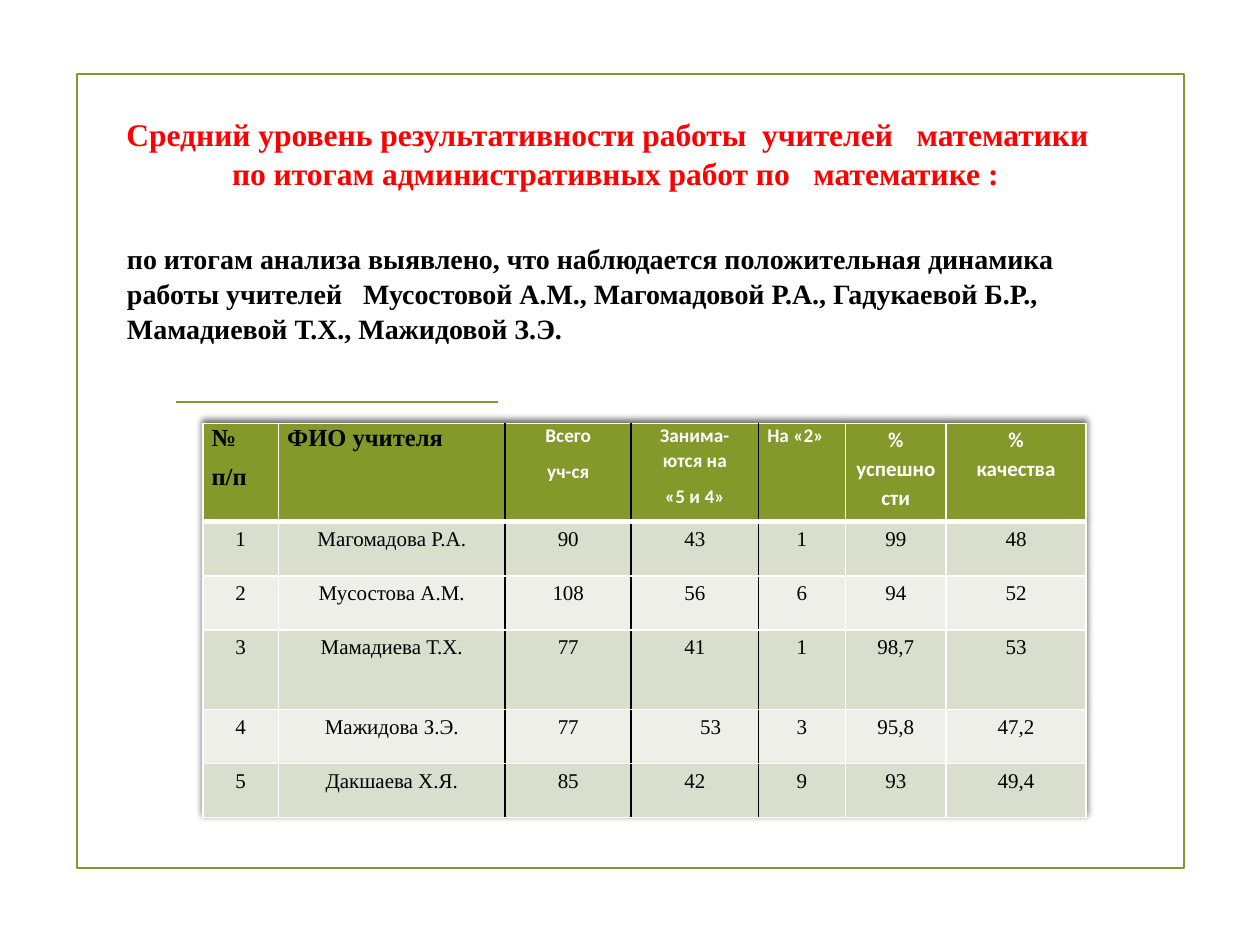
from lxml import etree
from pptx import Presentation, util as u
from pptx.dml.color import RGBColor
from pptx.enum import shapes, text
from pptx.oxml import ns

GREEN, WHITE, BLACK, RED = "83992A", "FFFFFF", "000000", "FF0000"
BANDS = ("D9DECD", "EDEFE8")
SERIF, SANS = "Times New Roman", "Calibri"
LEFT, CENTER = text.PP_ALIGN.LEFT, text.PP_ALIGN.CENTER

TITLE = ("Средний уровень результативности работы  учителей   математики   "
         "по итогам административных работ по   математике :")
SUMMARY = ("по итогам анализа выявлено, что наблюдается положительная динамика "
           "работы учителей   Мусостовой А.М., Магомадовой Р.А., Гадукаевой Б.Р., "
           "Мамадиевой Т.Х., Мажидовой З.Э.")

# paragraphs, font, size, colour, alignment, line spacing, points after
HEADERS = [
    (["№", "п/п"], SERIF, 14, BLACK, LEFT, 1.05, 6),
    (["ФИО учителя"], SERIF, 14, BLACK, LEFT, 1.05, 6),
    (["Всего", "уч-ся"], SANS, 11, WHITE, CENTER, 1.05, 6),
    (["Занима-\vются на", "«5 и 4»"], SANS, 11, WHITE, CENTER, 1.05, 6),
    (["На «2»"], SANS, 11, WHITE, LEFT, 1.05, 6),
    (["% успешности"], SANS, 12, WHITE, CENTER, 1.15, 0),
    (["%", "качества"], SANS, 12, WHITE, CENTER, 1.15, 0),
]
TEACHERS = [
    ("1", "Магомадова Р.А.", "90", "43", "1", "99", "48"),
    ("2", "Мусостова А.М.", "108", "56", "6", "94", "52"),
    ("3", "Мамадиева Т.Х.", "77", "41", "1", "98,7", "53"),
    ("4", "Мажидова З.Э.", "77", "53", "3", "95,8", "47,2"),
    ("5", "Дакшаева Х.Я.", "85", "42", "9", "93", "49,4"),
]
COLUMN_WIDTHS = (0.6, 1.8, 1, 1.01, 0.69, 0.8, 1.11)
ROW_HEIGHTS = (0.78, 0.43, 0.43, 0.63, 0.43, 0.43)
BLACK_EDGES = (2, 3, 4)  # column boundaries drawn in black
INDENTED_CELL = (4, 3)


def color(value):
    return RGBColor.from_string(value)


def child(parent, tag, **attributes):
    return etree.SubElement(parent, ns.qn(tag), attributes)


def write(frame, paragraphs, font, size, ink, bold=False, align=LEFT,
          spacing=1.0, after=0):
    frame.word_wrap = True
    for index, words in enumerate(paragraphs):
        para = frame.paragraphs[0] if index == 0 else frame.add_paragraph()
        para.alignment = align
        para.line_spacing = spacing
        para.space_after = u.Pt(after)
        for part, line in enumerate(words.split("\v")):
            if part:
                para.add_line_break()
            span = para.add_run()
            span.text = line
            span.font.name, span.font.size = font, u.Pt(size)
            span.font.bold = bold
            span.font.color.rgb = color(ink)


def add_text(slide, place, words, size, ink, align, top_margin):
    box = slide.shapes.add_textbox(*map(u.Inches, place))
    box.text_frame.margin_top = u.Inches(top_margin)
    write(box.text_frame, [words], SERIF, size, ink, True, align, 1.04)


def style_cell(cell, row, column):
    """Set the fill and the four borders of a cell."""
    cell.fill.solid()
    cell.fill.fore_color.rgb = color(BANDS[(row - 1) % 2] if row else GREEN)
    sides = {
        "L": (BLACK if column in BLACK_EDGES else WHITE, 1),
        "R": (BLACK if column + 1 in BLACK_EDGES else WHITE, 1),
        "T": (WHITE, 3 if row == 1 else 1),
        "B": (WHITE, 1 if row else 3),
    }
    properties = cell._tc.get_or_add_tcPr()
    for position, (side, (ink, width)) in enumerate(sides.items()):
        line = child(properties, f"a:ln{side}", w=str(u.Pt(width)))
        child(child(line, "a:solidFill"), "a:srgbClr", val=ink)
        properties.insert(position, line)


def add_table_shadow(table):
    properties = table._tbl.tblPr
    effects = child(properties, "a:effectLst")
    shadow = child(effects, "a:outerShdw", blurRad=str(u.Pt(4)),
                   dist=str(u.Pt(2)), dir="16200000", rotWithShape="0")
    child(child(shadow, "a:srgbClr", val=BLACK), "a:alpha", val="60000")
    properties.insert(0, effects)


def add_results(slide):
    table = slide.shapes.add_table(
        len(ROW_HEIGHTS), len(COLUMN_WIDTHS), u.Inches(1.61), u.Inches(3.36),
        u.Inches(sum(COLUMN_WIDTHS)), u.Inches(sum(ROW_HEIGHTS))).table
    for column, width in zip(table.columns, COLUMN_WIDTHS):
        column.width = u.Inches(width)
    for row, height in zip(table.rows, ROW_HEIGHTS):
        row.height = u.Inches(height)
    for column, (words, font, size, ink, align, spacing, after) in enumerate(HEADERS):
        cell = table.cell(0, column)
        cell.margin_left = cell.margin_right = u.Inches(0.07)
        cell.margin_top = cell.margin_bottom = 0
        write(cell.text_frame, words, font, size, ink, True, align, spacing, after)
        style_cell(cell, 0, column)
    for row, values in enumerate(TEACHERS, 1):
        for column, value in enumerate(values):
            cell = table.cell(row, column)
            write(cell.text_frame, [value], SERIF, 12, BLACK, align=CENTER)
            style_cell(cell, row, column)
    indented = table.cell(*INDENTED_CELL).text_frame.paragraphs[0]
    indented._p.get_or_add_pPr().set("marL", str(u.Inches(0.25)))
    add_table_shadow(table)


def add_frame(slide):
    frame = slide.shapes.add_shape(
        shapes.MSO_SHAPE.RECTANGLE, *map(u.Inches, (0.61, 0.59, 8.79, 6.3)))
    frame.shadow.inherit = False
    frame.fill.background()
    rule = slide.shapes.add_connector(
        shapes.MSO_CONNECTOR.STRAIGHT, *map(u.Inches, (1.4, 3.19, 3.95, 3.19)))
    child(rule._element.spPr, "a:effectLst")
    for outline in (frame.line, rule.line):
        outline.color.rgb = color(GREEN)
        outline.width = u.Pt(1.25)


def main():
    deck = Presentation()
    deck.slide_width, deck.slide_height = u.Inches(10), u.Inches(7.5)
    slide = deck.slides.add_slide(deck.slide_layouts[6])
    add_frame(slide)
    add_text(slide, (0.83, 0.8, 8.11, 1.22), TITLE, 18, RED, CENTER, 0.1)
    add_results(slide)
    add_text(slide, (0.91, 1.86, 7.87, 1.14), SUMMARY, 16, BLACK, LEFT, 0.05)
    deck.save("out.pptx")


if __name__ == "__main__":
    main()
